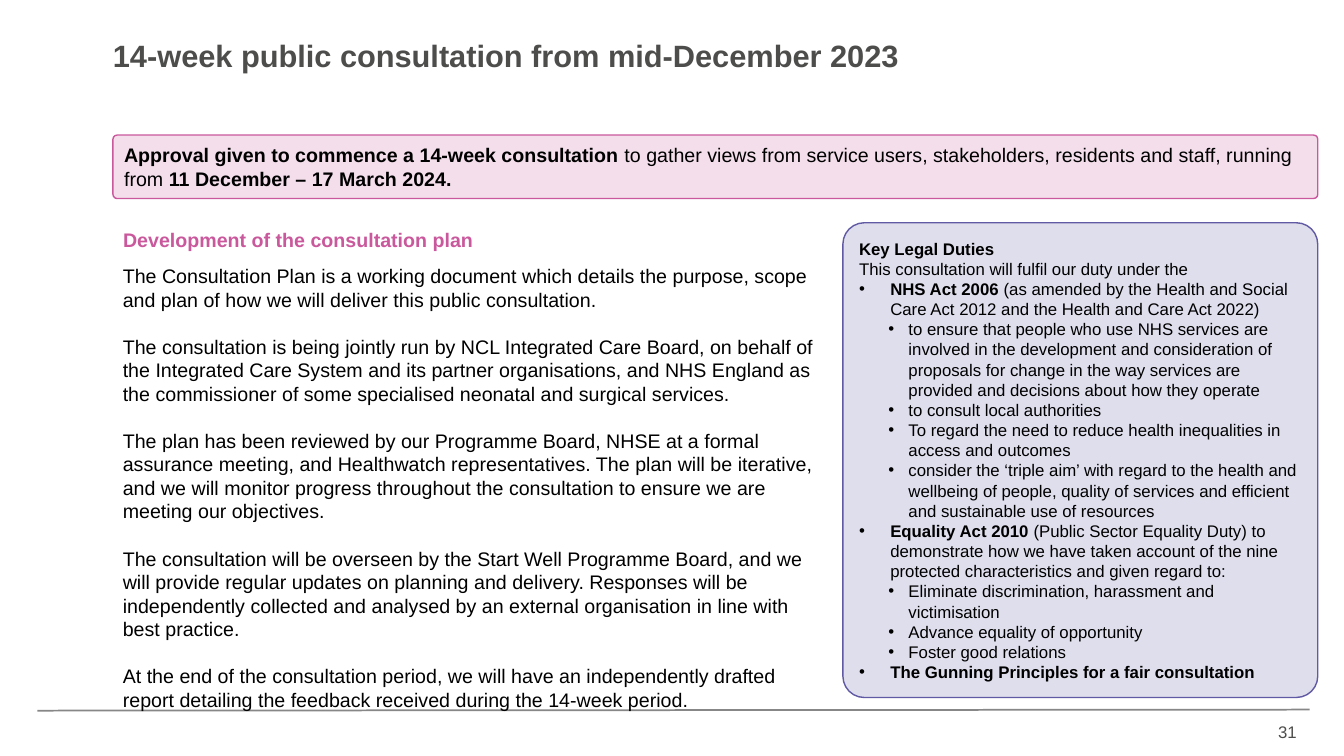
from lxml import etree
from pptx import Presentation
from pptx.dml.color import RGBColor
from pptx.enum.shapes import MSO_CONNECTOR, MSO_SHAPE
from pptx.enum.text import MSO_ANCHOR, PP_ALIGN
from pptx.oxml.ns import qn
from pptx.util import Inches, Pt

STRAIGHT = MSO_CONNECTOR.STRAIGHT
ROUNDED = MSO_SHAPE.ROUNDED_RECTANGLE
TOP, MIDDLE = MSO_ANCHOR.TOP, MSO_ANCHOR.MIDDLE
LEFT, RIGHT = PP_ALIGN.LEFT, PP_ALIGN.RIGHT

FONT = "Arial"
COLORS = {
    "text": "000000", "grey": "4D4D4C", "rule": "878787",
    "pink": "CA589C", "pale_pink": "F4DEEB",
    "violet": "6059A3", "pale_violet": "DFDEED",
}
# Left margin and hanging indent, in inches, by bullet level
BULLET_INDENTS = [(0.31, -0.31), (0.49, -0.2)]

PLAN_PARAGRAPHS = [
    "The Consultation Plan is a working document which details the purpose, scope and plan of "
    "how we will deliver this public consultation.",
    "The consultation is being jointly run by NCL Integrated Care Board, on behalf of the "
    "Integrated Care System and its partner organisations, and NHS England as the commissioner "
    "of some specialised neonatal and surgical services.",
    "The plan has been reviewed by our Programme Board, NHSE at a formal assurance meeting, and "
    "Healthwatch representatives. The plan will be iterative, and we will monitor progress "
    "throughout the consultation to ensure we are meeting our objectives.",
    "The consultation will be overseen by the Start Well Programme Board, and we will provide "
    "regular updates on planning and delivery. Responses will be independently collected and "
    "analysed by an external organisation in line with best practice.",
    "At the end of the consultation period, we will have an independently drafted report "
    "detailing the feedback received during the 14-week period.",
]

# Bullet level (None for plain), bold lead, regular remainder
LEGAL_DUTIES = [
    (None, "Key Legal Duties", ""),
    (None, "", "This consultation will fulfil our duty under the"),
    (0, "NHS Act 2006 ", "(as amended by the Health and Social Care Act 2012 and the Health and "
                         "Care Act 2022)"),
    (1, "", "to ensure that people who use NHS services are involved in the development and "
            "consideration of proposals for change in the way services are provided and "
            "decisions about how they operate"),
    (1, "", "to consult local authorities"),
    (1, "", "To regard the need to reduce health inequalities in access and outcomes"),
    (1, "", "consider the ‘triple aim’ with regard to the health and wellbeing of people, "
            "quality of services and efficient and sustainable use of resources"),
    (0, "Equality Act 2010 ", "(Public Sector Equality Duty) to demonstrate how we have taken "
                              "account of the nine protected characteristics and given regard to:"),
    (1, "", "Eliminate discrimination, harassment and victimisation"),
    (1, "", "Advance equality of opportunity"),
    (1, "", "Foster good relations"),
    (0, "The Gunning Principles for a fair consultation", ""),
]


def rgb(name):
    return RGBColor.from_string(COLORS[name])


def add_bullet(paragraph, level):
    margin, indent = BULLET_INDENTS[level]
    paragraph.level = level
    properties = paragraph._p.get_or_add_pPr()
    properties.set("marL", str(Inches(margin)))
    properties.set("indent", str(Inches(indent)))
    etree.SubElement(properties, qn("a:buFont")).set("typeface", FONT)
    etree.SubElement(properties, qn("a:buChar")).set("char", "•")


def write(frame, paragraphs, size=14, color="text", align=LEFT, anchor=TOP,
          gap=0, line_spacing=None, inset=None):
    """Fill a frame with (bullet level, [(text, bold), ...]) paragraphs."""
    frame.word_wrap = True
    frame.vertical_anchor = anchor
    if inset is not None:
        frame.margin_left = frame.margin_right = Inches(inset)
        frame.margin_top = frame.margin_bottom = Inches(inset)
    for index, (level, pieces) in enumerate(paragraphs):
        paragraph = frame.add_paragraph() if index else frame.paragraphs[0]
        if level is not None:
            add_bullet(paragraph, level)
        paragraph.alignment = align
        if line_spacing:
            paragraph.line_spacing = line_spacing
        if index and gap:
            paragraph.space_before = Pt(gap)
        for words, bold in pieces:
            run = paragraph.add_run()
            run.text = words
            run.font.name = FONT
            run.font.size = Pt(size)
            run.font.bold = bold
            run.font.color.rgb = rgb(color)


class SlideBuilder:
    def __init__(self, slide):
        self.shapes = slide.shapes

    def rule(self, x1, y1, x2, y2):
        line = self.shapes.add_connector(STRAIGHT, Inches(x1), Inches(y1), Inches(x2), Inches(y2))
        line.line.color.rgb = rgb("rule")
        line.line.width = Pt(1.25)
        etree.SubElement(line._element.spPr, qn("a:effectLst"))

    def text(self, x, y, width, height, paragraphs, **style):
        box = self.shapes.add_textbox(Inches(x), Inches(y), Inches(width), Inches(height))
        write(box.text_frame, paragraphs, **style)

    def panel(self, x, y, width, height, paragraphs, fill, outline, rounding, **style):
        panel = self.shapes.add_shape(ROUNDED, Inches(x), Inches(y), Inches(width), Inches(height))
        panel.adjustments[0] = rounding
        panel.shadow.inherit = False
        panel.fill.solid()
        panel.fill.fore_color.rgb = rgb(fill)
        panel.line.color.rgb = rgb(outline)
        panel.line.width = Pt(1)
        write(panel.text_frame, paragraphs, anchor=MIDDLE, **style)


def main():
    deck = Presentation()
    deck.slide_width, deck.slide_height = Inches(13.33), Inches(7.5)
    page = SlideBuilder(deck.slides.add_slide(deck.slide_layouts[6]))

    page.rule(0.37, 7.05, 12.99, 7.04)
    page.text(12.1, 7.11, 0.86, 0.3, [(None, [("31", False)])],
              size=12, color="grey", align=RIGHT)
    page.text(1.12, 0.41, 7.95, 0.46,
              [(None, [("14-week public consultation from mid-December 2023", True)])],
              size=22, color="grey", line_spacing=0.9, inset=0)
    page.text(1.12, 2.57, 7.07, 4.58,
              [(None, [(words, False)]) for words in PLAN_PARAGRAPHS], gap=16.8)
    page.text(1.22, 2.21, 4.71, 0.33,
              [(None, [("Development of the consultation plan", True)])],
              color="pink", anchor=MIDDLE, inset=0)

    duties = [(level, [(words, bold) for words, bold in ((lead, True), (rest, False)) if words])
              for level, lead, rest in LEGAL_DUTIES]
    page.panel(8.36, 2.21, 4.71, 4.71, duties, "pale_violet", "violet", 0.045, size=12)

    approval = [("Approval given to commence a 14-week consultation ", True),
                ("to gather views from service users, stakeholders, residents and staff, "
                 "running from ", False),
                ("11 December – 17 March 2024.", True)]
    page.panel(1.12, 1.34, 11.95, 0.63, [(None, approval)], "pale_pink", "pink", 0.067)

    deck.save("out.pptx")


if __name__ == "__main__":
    main()
